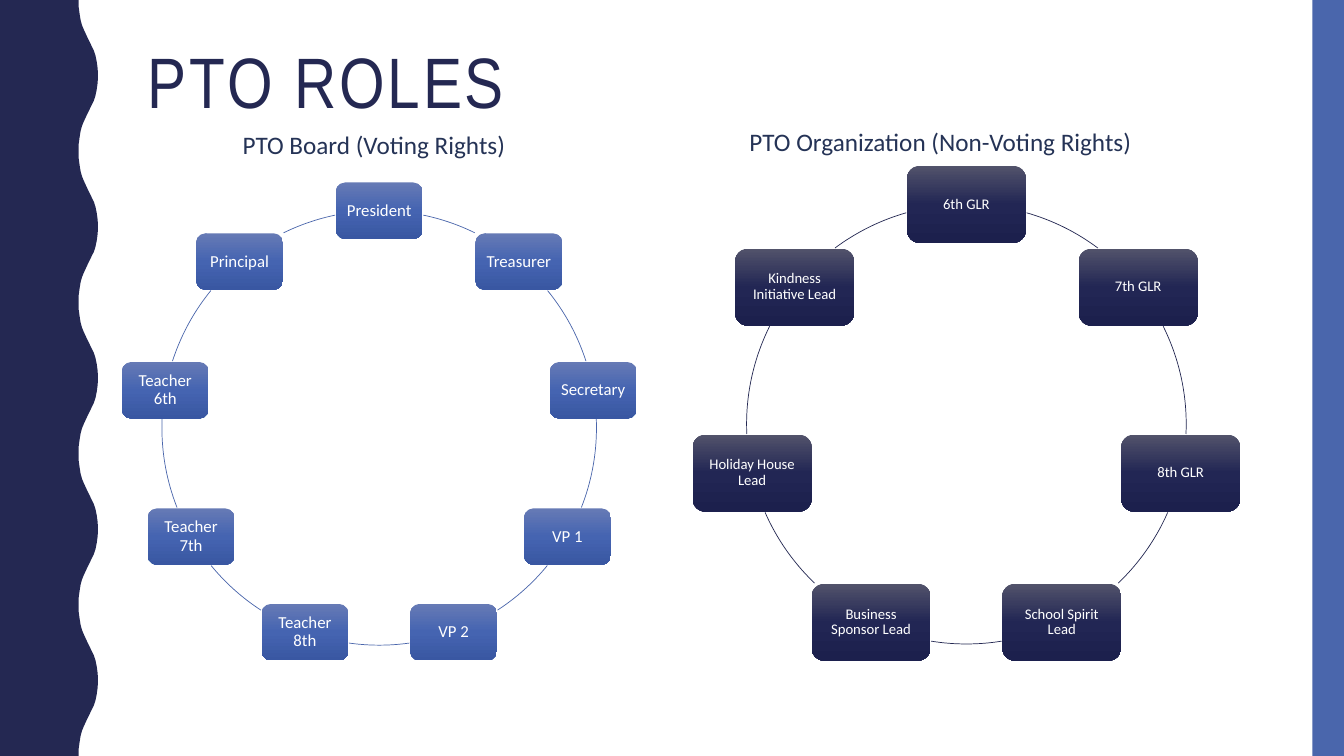
from copy import deepcopy
from dataclasses import dataclass
from math import cos, radians, sin
from typing import Any

from pptx import Presentation
from pptx.dml.color import RGBColor as Rgb
from pptx.enum.shapes import MSO_SHAPE as Preset
from pptx.enum.text import MSO_ANCHOR as Anchor, PP_ALIGN as Align
from pptx.oxml.ns import qn
from pptx.util import Pt


@dataclass(frozen=True)
class Theme:
    navy: str = "242852"
    blue: str = "4A66AC"
    caption: str = "253356"
    white: str = "FFFFFF"
    blue_fade: tuple[str, ...] = ("667AB5", "4564B1", "3957A2")
    navy_fade: tuple[str, ...] = ("52536B", "222654", "1C204D")
    title_font: str = "Arial Narrow"
    body_font: str = "Calibri"
    title_size: float = 51
    caption_size: float = 18
    board_size: float = 12
    organization_size: float = 10.5


@dataclass(frozen=True)
class Label:
    text: str
    left: float
    top: float
    width: float
    height: float
    font: str
    size: float
    color: str
    align: Any = Align.LEFT
    line_spacing: float = 1.0
    tracking: int = 0


@dataclass(frozen=True)
class Ring:
    roles: tuple[str, ...]
    center_x: float
    center_y: float
    radius: float
    node_width: float
    node_height: float
    inset: float
    fade: tuple[str, ...]
    line: str
    size: float


THEME = Theme()
PAGE_WIDTH, PAGE_HEIGHT = 960, 540
BAR_WIDTH = 22.5

# Half of one wave of the left edge; the other half mirrors it
WAVE_LENGTH = 108
HALF_WAVE = (
    (56.2, 0), (56.2, 5), (56.9, 10), (57.6, 14.4), (58.6, 18),
    (59.8, 21), (61.2, 24), (62.6, 27), (64.1, 30), (65.5, 33),
    (67, 36), (68.2, 39.6), (69.1, 44), (69.8, 49), (70, 54),
)

LABELS = (
    Label("PTO ROLES", 98.6, 30.2, 801.4, 117.4, THEME.title_font,
          THEME.title_size, THEME.navy, line_spacing=0.9, tracking=200),
    Label("PTO Board (Voting Rights)", 127.4, 88.6, 279.4, 29, THEME.body_font,
          THEME.caption_size, THEME.caption, Align.CENTER),
    Label("PTO Organization (Non-Voting Rights)", 486, 86.4, 371.5, 29,
          THEME.body_font, THEME.caption_size, THEME.caption, Align.CENTER),
)

# Roles run clockwise from the top
RINGS = (
    Ring(("President", "Treasurer", "Secretary", "VP 1", "VP 2", "Teacher 8th",
          "Teacher 7th", "Teacher 6th", "Principal"),
         270.9, 305.7, 155.2, 62, 40.4, 5.6,
         THEME.blue_fade, THEME.blue, THEME.board_size),
    Ring(("6th GLR", "7th GLR", "8th GLR", "School Spirit Lead",
          "Business Sponsor Lead", "Holiday House Lead",
          "Kindness Initiative Lead"),
         690.3, 303, 157, 85, 55, 6.2,
         THEME.navy_fade, THEME.navy, THEME.organization_size),
)


def apply(target: Any, values: dict[str, Any]) -> None:
    for name, value in values.items():
        setattr(target, name, value)


def paint(shape: Any, color: str) -> None:
    shape.shadow.inherit = False
    shape.fill.solid()
    shape.fill.fore_color.rgb = Rgb.from_string(color)
    shape.line.fill.background()


def write(frame: Any, text: str, font: str, size: float, color: str,
          align: Any, line_spacing: float) -> Any:
    para = frame.paragraphs[0]
    apply(para, {"alignment": align, "line_spacing": line_spacing})
    span = para.add_run()
    span.text = text
    apply(span.font, {"name": font, "size": Pt(size)})
    span.font.color.rgb = Rgb.from_string(color)
    return span


def draw_wave(page: Any) -> None:
    mirrored = [(x, WAVE_LENGTH - y) for x, y in reversed(HALF_WAVE[:-1])]
    wave = [*HALF_WAVE, *mirrored[:-1]]
    edge = [(x, y + start) for start in range(0, PAGE_HEIGHT, WAVE_LENGTH)
            for x, y in wave]
    outline = [*edge, (HALF_WAVE[0][0], PAGE_HEIGHT), (0, PAGE_HEIGHT)]
    builder = page.shapes.build_freeform(0, 0)
    builder.add_line_segments([(Pt(x), Pt(y)) for x, y in outline], close=True)
    paint(builder.convert_to_shape(), THEME.navy)


def draw_label(page: Any, label: Label) -> None:
    box = page.shapes.add_textbox(Pt(label.left), Pt(label.top),
                                  Pt(label.width), Pt(label.height))
    box.text_frame.word_wrap = True
    span = write(box.text_frame, label.text, label.font, label.size,
                 label.color, label.align, label.line_spacing)
    if label.tracking:
        span.font._element.set("spc", str(label.tracking))


def fade_fill(shape: Any, colors: tuple[str, ...]) -> None:
    shape.fill.gradient()
    shape.fill.gradient_angle = 270
    stops = shape._element.spPr.find(qn("a:gradFill")).find(qn("a:gsLst"))
    stops.append(deepcopy(stops[0]))
    for index, (stop, color) in enumerate(zip(shape.fill.gradient_stops, colors)):
        stop.color.rgb = Rgb.from_string(color)
        stop.position = index / (len(colors) - 1)


def ring_offset(ring: Ring, angle: float) -> tuple[float, float]:
    return ring.radius * cos(radians(angle)), ring.radius * sin(radians(angle))


def leave_node(ring: Ring, node_angle: float, step: float) -> float:
    """Angle at which the ring comes out of a node, going in the step's direction."""
    node_x, node_y = ring_offset(ring, node_angle)
    angle, inside = node_angle, True
    while inside:
        angle += step
        x, y = ring_offset(ring, angle)
        inside = (abs(x - node_x) < ring.node_width / 2 + 0.4
                  and abs(y - node_y) < ring.node_height / 2 + 0.4)
    return angle


def draw_node(group: Any, ring: Ring, role: str, angle: float) -> None:
    x, y = ring_offset(ring, angle)
    node = group.shapes.add_shape(
        Preset.ROUNDED_RECTANGLE,
        Pt(ring.center_x + x - ring.node_width / 2),
        Pt(ring.center_y + y - ring.node_height / 2),
        Pt(ring.node_width), Pt(ring.node_height))
    node.shadow.inherit = False
    node.line.fill.background()
    fade_fill(node, ring.fade)
    margins = {f"margin_{side}": Pt(ring.inset)
               for side in ("left", "top", "right", "bottom")}
    apply(node.text_frame, {"word_wrap": True, "vertical_anchor": Anchor.MIDDLE,
                            **margins})
    write(node.text_frame, role, THEME.body_font, ring.size, THEME.white,
          Align.CENTER, 0.9)


def draw_arc(group: Any, ring: Ring, start: float, end: float) -> None:
    arc = group.shapes.add_shape(
        Preset.ARC, Pt(ring.center_x - ring.radius),
        Pt(ring.center_y - ring.radius), Pt(2 * ring.radius), Pt(2 * ring.radius))
    for index, angle in enumerate((start, end)):
        arc.adjustments[index] = angle % 360 * 0.6  # 60000 units to a degree
    arc.shadow.inherit = False
    arc.fill.background()
    arc.line.color.rgb = Rgb.from_string(ring.line)
    arc.line.width = Pt(0.5)


def draw_ring(page: Any, ring: Ring) -> None:
    group = page.shapes.add_group_shape()
    step = 360 / len(ring.roles)
    for index, role in enumerate(ring.roles):
        angle = index * step - 90
        draw_node(group, ring, role, angle)
        draw_arc(group, ring, leave_node(ring, angle, 0.1),
                 leave_node(ring, angle + step, -0.1))


def main() -> None:
    deck = Presentation()
    apply(deck, {"slide_width": Pt(PAGE_WIDTH), "slide_height": Pt(PAGE_HEIGHT)})
    page = deck.slides.add_slide(deck.slide_layouts[6])
    # Side decoration
    draw_wave(page)
    bar = page.shapes.add_shape(Preset.RECTANGLE, Pt(PAGE_WIDTH - BAR_WIDTH), 0,
                                Pt(BAR_WIDTH), Pt(PAGE_HEIGHT))
    paint(bar, THEME.blue)
    # Title, captions and role rings
    for label in LABELS:
        draw_label(page, label)
    for ring in RINGS:
        draw_ring(page, ring)
    deck.save("out.pptx")


if __name__ == "__main__":
    main()
